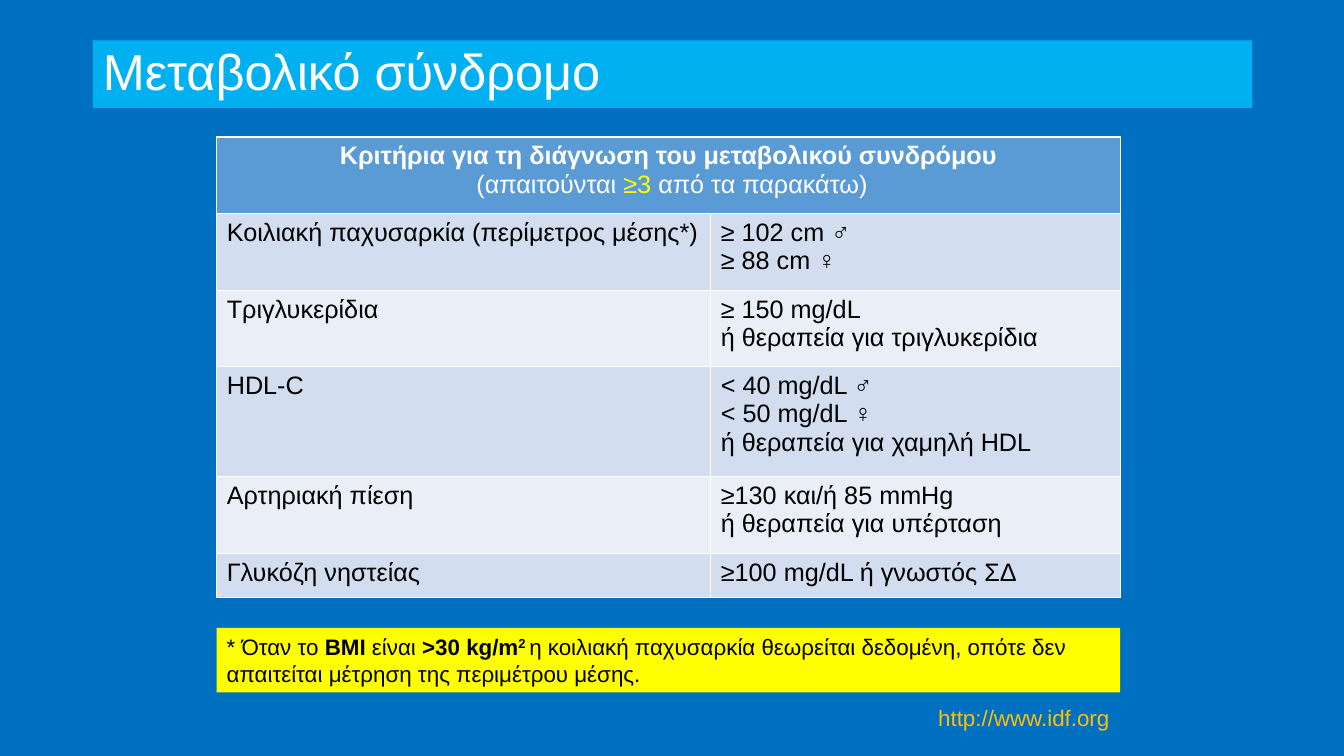
import pptx
import pptx.util
import pptx.dml.color
import pptx.enum.shapes
import pptx.enum.text
from dataclasses import dataclass

Inches = pptx.util.Inches
Align = pptx.enum.text.PP_ALIGN
Anchor = pptx.enum.text.MSO_ANCHOR

# A paragraph is a list of (text, format) spans.
TITLE = [[("Μεταβολικό σύνδρομο", {})]]
HEADER = [
    [("Κριτήρια για τη διάγνωση του μεταβολικού συνδρόμου", {"bold": True})],
    [(" (απαιτούνται ", {}), ("≥3", {"color": "FFFF00"}), (" από τα παρακάτω)", {})],
]
CRITERIA = [
    ("Κοιλιακή παχυσαρκία (περίμετρος μέσης*)", ["≥ 102 cm ♂", "≥ 88 cm ♀"]),
    ("Τριγλυκερίδια", ["≥ 150 mg/dL", "ή θεραπεία για τριγλυκερίδια"]),
    ("HDL-C", ["< 40 mg/dL ♂", "< 50 mg/dL ♀", "ή θεραπεία για χαμηλή HDL"]),
    ("Αρτηριακή πίεση", ["≥130 και/ή 85 mmHg", "ή θεραπεία για υπέρταση"]),
    ("Γλυκόζη νηστείας", ["≥100 mg/dL ή γνωστός ΣΔ"]),
]
FOOTNOTE = [[
    ("* Όταν το ", {}),
    ("BMI ", {"bold": True}),
    ("είναι ", {}),
    (">30 kg/m", {"bold": True}),
    ("2 ", {"bold": True, "baseline": 30}),
    ("η κοιλιακή παχυσαρκία θεωρείται δεδομένη, οπότε δεν "
     "απαιτείται μέτρηση της περιμέτρου μέσης.", {}),
]]
SOURCE = [[("http://www.idf.org", {})]]

COLUMN_WIDTHS = [4.9, 4.06]
ROW_HEIGHTS = {1: 0.44, 2: 0.76, 3: 1.09}  # by number of text lines
TABLE_LEFT, TABLE_TOP = 2.15, 1.36
TABLE_WIDTH = sum(COLUMN_WIDTHS)


@dataclass(frozen=True)
class Theme:
    font: str = "Arial"
    background: str = "0070C0"
    title_fill: str = "00B0F0"
    header_fill: str = "5B9BD5"
    bands: tuple = ("D2DEEF", "EAEFF7")
    note_fill: str = "FFFF00"
    light: str = "FFFFFF"
    dark: str = "000000"
    link: str = "FFC000"
    title_size: int = 36
    table_size: int = 18
    note_size: int = 16


THEME = Theme()


def rgb(value):
    return pptx.dml.color.RGBColor.from_string(value)


def paint(target, color):
    target.fill.solid()
    target.fill.fore_color.rgb = rgb(color)


def write(frame, paragraphs, size, color, align=Align.LEFT):
    for index, spans in enumerate(paragraphs):
        para = frame.paragraphs[0] if index == 0 else frame.add_paragraph()
        para.alignment = align
        for text, changes in spans:
            look = {"color": color, "bold": False, **changes}
            span = para.add_run()
            span.text = text
            span.font.color.rgb = rgb(look.pop("color"))
            baseline = look.pop("baseline", None)
            look.update(name=THEME.font, size=pptx.util.Pt(size))
            for name, value in look.items():
                setattr(span.font, name, value)
            if baseline:
                span.font._element.set("baseline", str(baseline * 1000))


def place(shape, left, top, width, height):
    for name, value in zip(("left", "top", "width", "height"), (left, top, width, height)):
        setattr(shape, name, Inches(value))


def add_title(page):
    title = page.shapes.title
    place(title, 0.92, 0.4, 11.5, 0.67)
    paint(title, THEME.title_fill)
    frame = title.text_frame
    frame.auto_size = pptx.enum.text.MSO_AUTO_SIZE.NONE
    frame.vertical_anchor = Anchor.MIDDLE
    write(frame, TITLE, THEME.title_size, THEME.light)
    frame.paragraphs[0].line_spacing = 0.9


def add_criteria_table(page):
    heights = [ROW_HEIGHTS[len(HEADER)]] + [ROW_HEIGHTS[len(limits)] for _, limits in CRITERIA]
    table = page.shapes.add_table(
        len(heights), len(COLUMN_WIDTHS), Inches(TABLE_LEFT), Inches(TABLE_TOP),
        Inches(TABLE_WIDTH), Inches(sum(heights))).table
    for column, width in zip(table.columns, COLUMN_WIDTHS):
        column.width = Inches(width)
    for row, height in zip(table.rows, heights):
        row.height = Inches(height)

    header = table.cell(0, 0)
    header.merge(table.cell(0, 1))
    paint(header, THEME.header_fill)
    write(header.text_frame, HEADER, THEME.table_size, THEME.light, Align.CENTER)

    for index, (criterion, limits) in enumerate(CRITERIA):
        for column, lines in enumerate(([criterion], limits)):
            cell = table.cell(index + 1, column)
            paint(cell, THEME.bands[index % 2])
            write(cell.text_frame, [[(line, {})] for line in lines],
                  THEME.table_size, THEME.dark)


def add_footnote(page):
    note = page.shapes.add_shape(
        pptx.enum.shapes.MSO_SHAPE.RECTANGLE, Inches(TABLE_LEFT), Inches(6.23),
        Inches(TABLE_WIDTH), Inches(0.64))
    note.shadow.inherit = False
    paint(note, THEME.note_fill)
    note.line.fill.background()
    note.text_frame.word_wrap = True
    note.text_frame.vertical_anchor = Anchor.TOP
    write(note.text_frame, FOOTNOTE, THEME.note_size, THEME.dark)


def add_source(page):
    box = page.shapes.add_textbox(Inches(9.2), Inches(6.94), Inches(1.91), Inches(0.37))
    box.text_frame.word_wrap = True
    write(box.text_frame, SOURCE, THEME.note_size, THEME.link, Align.CENTER)


def main():
    deck = pptx.Presentation()
    deck.slide_width, deck.slide_height = Inches(13.33), Inches(7.5)
    page = deck.slides.add_slide(deck.slide_layouts.get_by_name("Title Only"))
    paint(page.background, THEME.background)
    add_title(page)
    add_criteria_table(page)
    add_footnote(page)
    add_source(page)
    deck.save("out.pptx")


if __name__ == "__main__":
    main()
